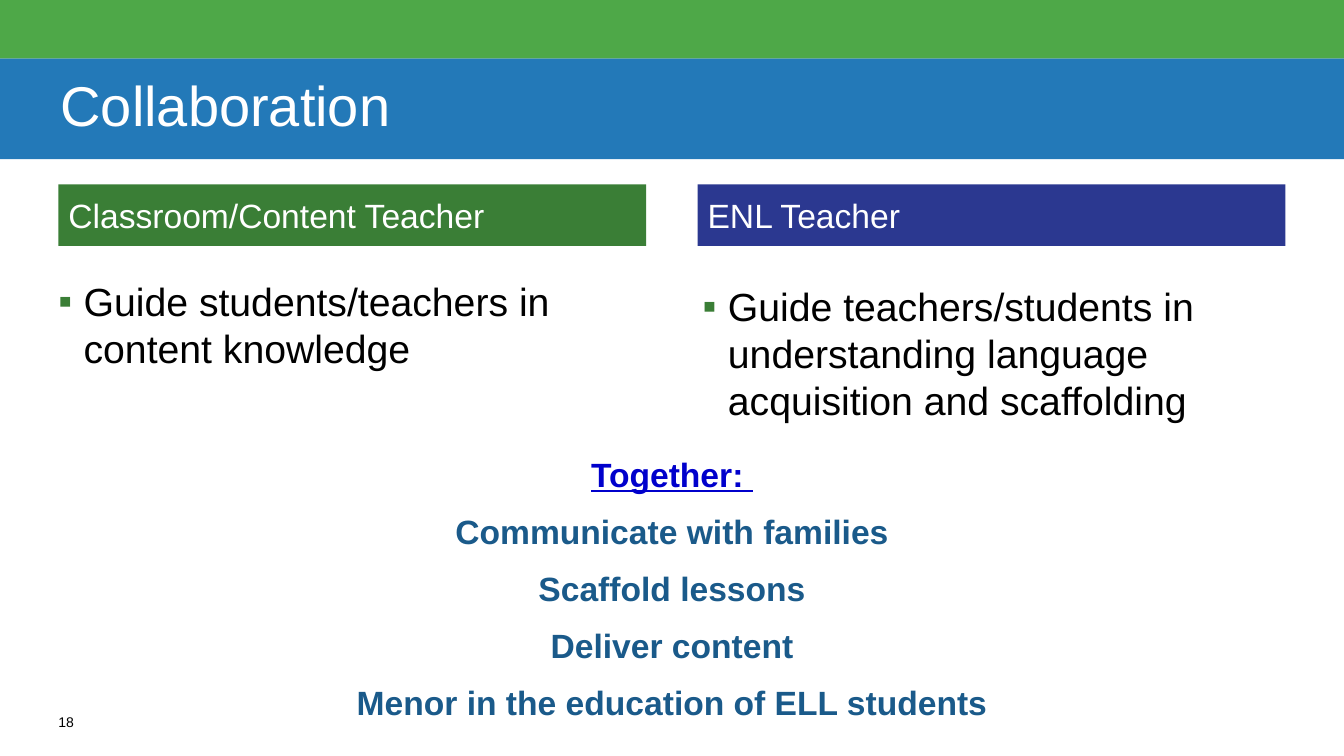
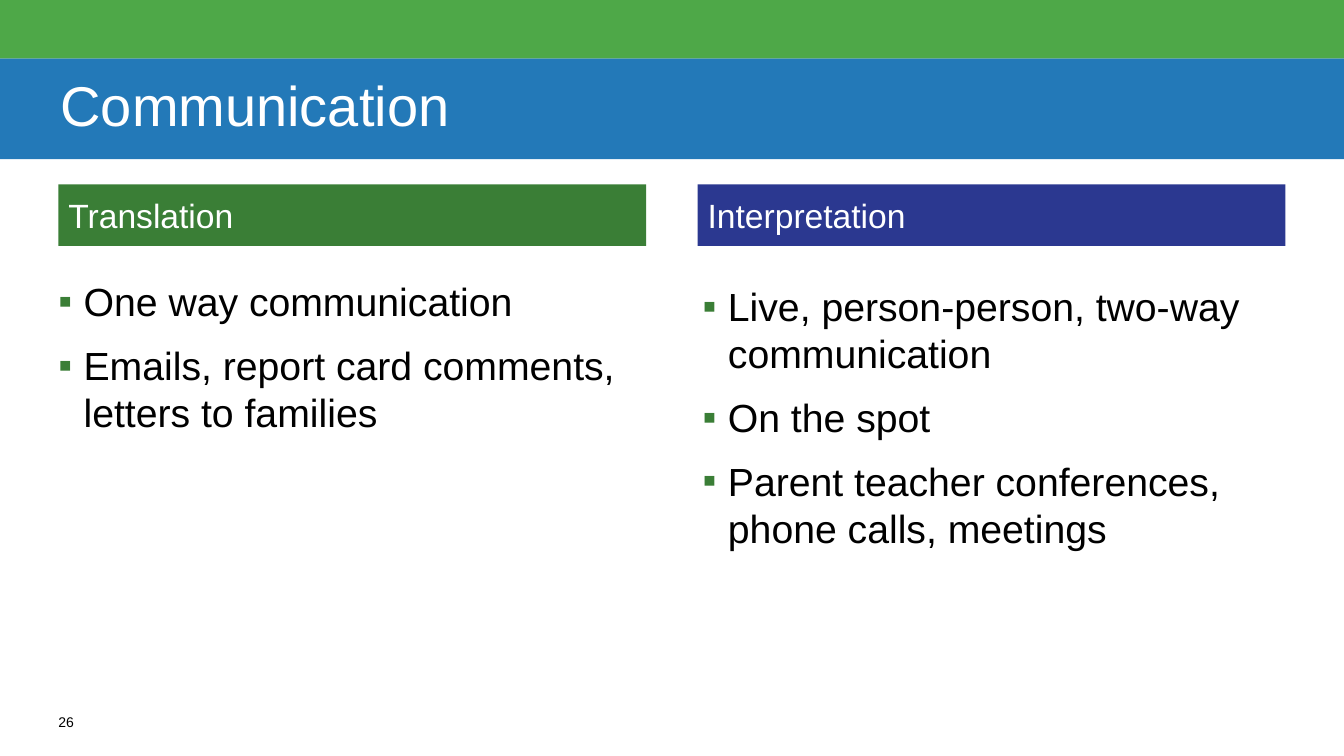
from lxml import etree
from pptx import Presentation
from pptx.dml.color import RGBColor
from pptx.enum.shapes import MSO_SHAPE
from pptx.enum.text import MSO_ANCHOR, MSO_AUTO_SIZE, PP_ALIGN
from pptx.oxml.ns import qn
from pptx.util import Inches, Pt

RECTANGLE = MSO_SHAPE.RECTANGLE
TOP, MIDDLE = MSO_ANCHOR.TOP, MSO_ANCHOR.MIDDLE
LEFT, CENTER = PP_ALIGN.LEFT, PP_ALIGN.CENTER
NO_AUTOFIT = MSO_AUTO_SIZE.NONE
TITLE_ONLY_LAYOUT = 5

FONT = "Arial"
COLORS = {
    "band": "4EA848",
    "title": "2379B8",
    "left": "3A7E36",
    "right": "2B3890",
    "bullet": "3A7E36",
    "heading": "0000CC",
    "shared": "1A5A8A",
    "text": "000000",
    "white": "FFFFFF",
}

SLIDE_WIDTH, SLIDE_HEIGHT = 13.33, 7.5
BAND_HEIGHT, TITLE_HEIGHT = 0.58, 1
MARGIN, GAP, COLUMN_WIDTH = 0.58, 0.51, 5.83
HEADER_TOP, HEADER_HEIGHT = 1.83, 0.61
LIST_OFFSET, LIST_HEIGHT = 0.92, 3.5
BULLET_INDENT = 0.25
PARAGRAPH_GAP = 12

SLIDES = [
    {
        "title": "Collaboration",
        "number": "18",
        "columns": [
            ("Classroom/Content Teacher",
             ["Guide students/teachers in content knowledge"]),
            ("ENL Teacher",
             ["Guide teachers/students in understanding language "
              "acquisition and scaffolding"]),
        ],
        "together": [
            "Together: ",
            "Communicate with families",
            "Scaffold lessons",
            "Deliver content",
            "Menor in the education of ELL students",
        ],
    },
    {
        "title": "Communication",
        "number": "26",
        "columns": [
            ("Translation",
             ["One way communication",
              "Emails, report card comments, letters to families"]),
            ("Interpretation",
             ["Live, person-person, two-way communication",
              "On the spot",
              "Parent teacher conferences, phone calls, meetings"]),
        ],
    },
]


def color(name):
    return RGBColor.from_string(COLORS[name])


def fill_shape(shape, name):
    shape.fill.solid()
    shape.fill.fore_color.rgb = color(name)
    shape.line.fill.background()


def add_band(slide, box, name):
    shape = slide.shapes.add_shape(RECTANGLE, *map(Inches, box))
    shape.shadow.inherit = False
    fill_shape(shape, name)
    return shape


def add_text_box(slide, box):
    return slide.shapes.add_textbox(*map(Inches, box))


def format_frame(frame, horizontal=0, vertical=0, anchor=TOP):
    values = {
        "word_wrap": True,
        "auto_size": NO_AUTOFIT,
        "vertical_anchor": anchor,
        "margin_left": Inches(horizontal),
        "margin_right": Inches(horizontal),
        "margin_top": Inches(vertical),
        "margin_bottom": Inches(vertical),
    }
    for name, value in values.items():
        setattr(frame, name, value)


def add_bullet(paragraph):
    properties = paragraph._p.get_or_add_pPr()
    properties.set("marL", str(Inches(BULLET_INDENT)))
    properties.set("indent", str(-Inches(BULLET_INDENT)))
    bullet_color = etree.SubElement(properties, qn("a:buClr"))
    etree.SubElement(bullet_color, qn("a:srgbClr"), val=COLORS["bullet"])
    etree.SubElement(properties, qn("a:buFont"), typeface=FONT)
    etree.SubElement(properties, qn("a:buChar"), char="▪")


def write_lines(frame, lines, size, color_name, align=LEFT, bullets=False, **font_values):
    for index, line in enumerate(lines):
        paragraph = frame.add_paragraph() if index else frame.paragraphs[0]
        paragraph.text = line
        if bullets:
            add_bullet(paragraph)
        paragraph.alignment = align
        paragraph.space_before = Pt(PARAGRAPH_GAP if index else 0)
        font = paragraph.runs[0].font
        font.color.rgb = color(color_name)
        values = {"name": FONT, "size": Pt(size), **font_values}
        for name, value in values.items():
            setattr(font, name, value)


def place_title(slide, text):
    add_band(slide, (0, 0, SLIDE_WIDTH, BAND_HEIGHT), "band")
    title = slide.shapes.title
    title.left, title.top = Inches(0), Inches(BAND_HEIGHT)
    title.width, title.height = Inches(SLIDE_WIDTH), Inches(TITLE_HEIGHT)
    fill_shape(title, "title")
    format_frame(title.text_frame, horizontal=0.6, anchor=MIDDLE)
    write_lines(title.text_frame, [text], 40, "white")
    title.text_frame.paragraphs[0].line_spacing = 0.9


def add_column(slide, box, heading, items, fill_name, inset):
    """Place a coloured heading with a bulleted list below it."""
    left, top, width, height = box
    header = add_band(slide, (left, top, width, HEADER_HEIGHT), fill_name)
    format_frame(header.text_frame, 0.1, 0.1)
    write_lines(header.text_frame, [heading], 24, "white")

    list_box = (left, top + LIST_OFFSET, width, height - LIST_OFFSET)
    frame = add_text_box(slide, list_box).text_frame
    format_frame(frame, inset, inset)
    write_lines(frame, items, 28, "text", bullets=True)


def add_together(slide, box, lines):
    frame = add_text_box(slide, box).text_frame
    format_frame(frame)
    write_lines(frame, lines, 24, "shared", align=CENTER, bold=True)
    heading_font = frame.paragraphs[0].runs[0].font
    heading_font.color.rgb = color("heading")
    heading_font.underline = True


def add_slide_number(slide, box, number):
    frame = add_text_box(slide, box).text_frame
    format_frame(frame)
    write_lines(frame, [number], 10, "text")


def add_comparison_slide(presentation, content):
    layout = presentation.slide_layouts[TITLE_ONLY_LAYOUT]
    slide = presentation.slides.add_slide(layout)
    place_title(slide, content["title"])
    column_styles = [("left", 0), ("right", 0.05)]
    for index, (heading, items) in enumerate(content["columns"]):
        left = MARGIN + index * (COLUMN_WIDTH + GAP)
        box = (left, HEADER_TOP, COLUMN_WIDTH, LIST_OFFSET + LIST_HEIGHT)
        add_column(slide, box, heading, items, *column_styles[index])
    if "together" in content:
        width = 2 * COLUMN_WIDTH + GAP
        add_together(slide, (MARGIN, 4.5, width, 2.69), content["together"])
    add_slide_number(slide, (MARGIN, 7.08, 0.42, 0.25), content["number"])


def main():
    presentation = Presentation()
    presentation.slide_width = Inches(SLIDE_WIDTH)
    presentation.slide_height = Inches(SLIDE_HEIGHT)
    for content in SLIDES:
        add_comparison_slide(presentation, content)
    presentation.save("out.pptx")


if __name__ == "__main__":
    main()
